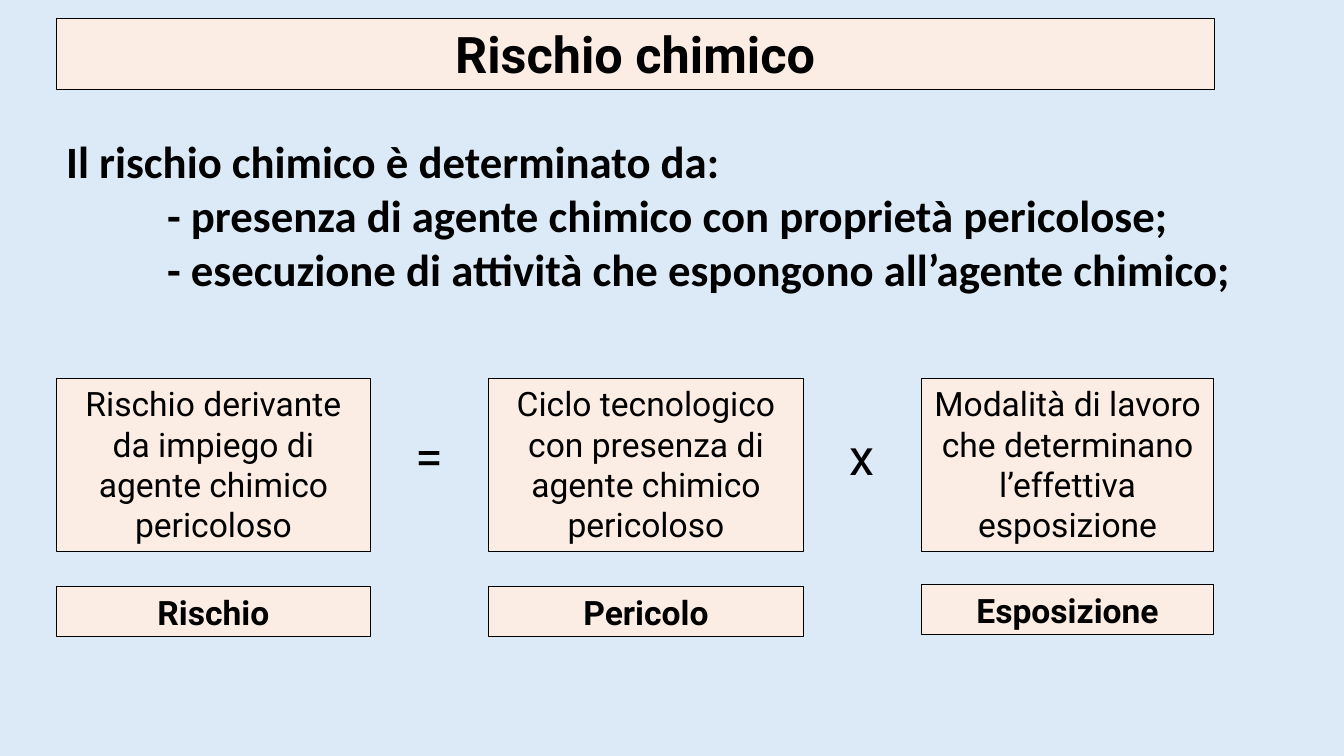
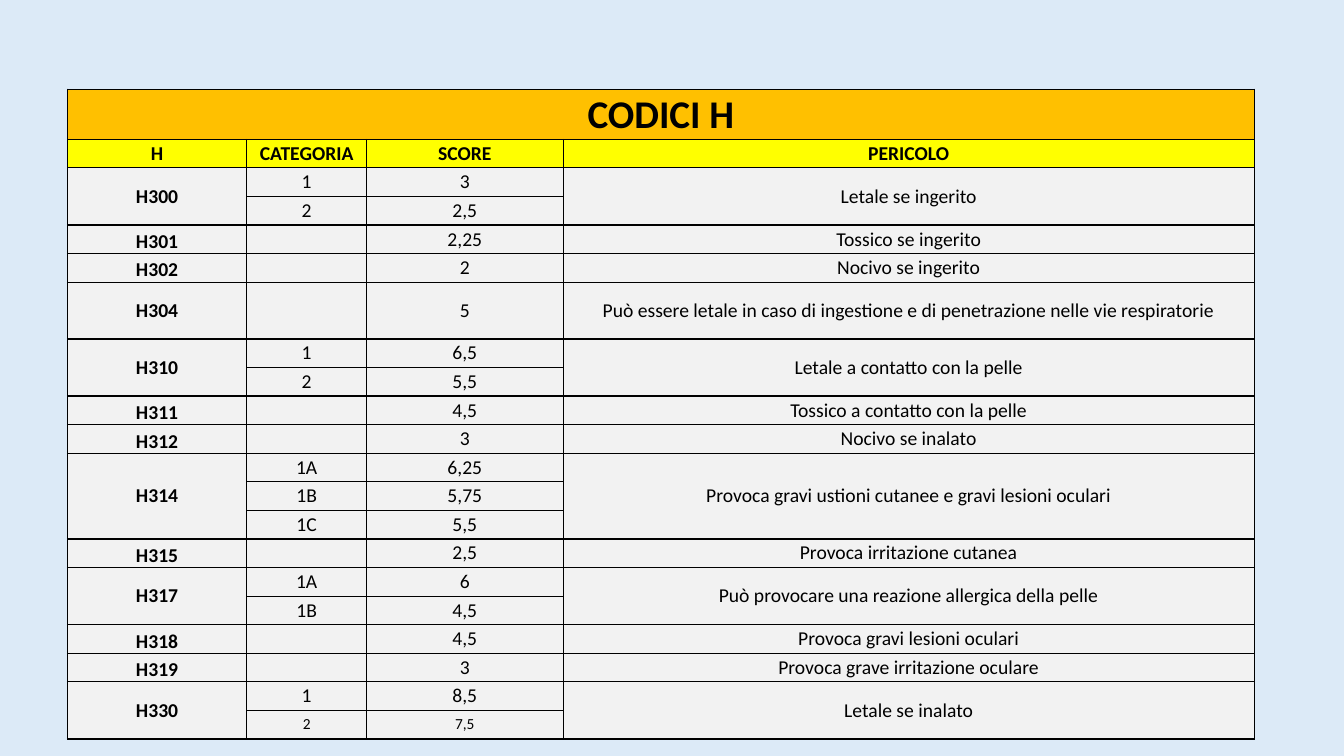
from dataclasses import dataclass
from typing import NamedTuple

from lxml.etree import SubElement
from pptx import Presentation
from pptx.dml.color import RGBColor
from pptx.enum.text import MSO_ANCHOR, MSO_AUTO_SIZE, PP_ALIGN
from pptx.oxml.ns import qn
from pptx.slide import Slide
from pptx.table import _Cell
from pptx.text.text import _Paragraph
from pptx.util import Cm, Pt

BACKGROUND = RGBColor(0xDC, 0xEA, 0xF7)
PEACH = RGBColor(0xFC, 0xED, 0xE4)
BLACK = RGBColor(0x00, 0x00, 0x00)
ORANGE = RGBColor(0xFF, 0xC0, 0x00)
YELLOW = RGBColor(0xFF, 0xFF, 0x00)
GREY = RGBColor(0xF2, 0xF2, 0xF2)
HEADING_FONT = "Roboto"
BODY_FONT = "Calibri"

LEFT = 1.42
FACTOR_PITCH = 10.9
FACTOR_TOP = 9.53
FACTOR_HEIGHT = 4.37
OPERATOR_WIDTH = 2.13
THIN, THICK = 0.5, 1


class Area(NamedTuple):
    """Left, top, width and height in centimetres."""
    left: float
    top: float
    width: float
    height: float


@dataclass
class TextStyle:
    font: str
    size: int
    bold: bool = False
    align: PP_ALIGN = PP_ALIGN.CENTER


@dataclass
class Factor:
    description: str
    label: str
    width: float
    label_top: float
    operator: str = ""


@dataclass
class Hazard:
    code: str
    danger: str
    levels: list[tuple[str, str]]
    row_height: float = 0.72
    follows_pair: bool = False
    anchor: MSO_ANCHOR = MSO_ANCHOR.MIDDLE


TITLE = TextStyle(HEADING_FONT, 36, bold=True)
OPERATOR = TextStyle(HEADING_FONT, 36)
DESCRIPTION = TextStyle(HEADING_FONT, 24)
LABEL = TextStyle(HEADING_FONT, 24, bold=True)
INTRO = TextStyle(BODY_FONT, 32, bold=True, align=PP_ALIGN.JUSTIFY)
TABLE_TITLE = TextStyle(BODY_FONT, 28, bold=True)
TABLE_BOLD = TextStyle(BODY_FONT, 14, bold=True)
TABLE_TEXT = TextStyle(BODY_FONT, 14)
TABLE_SMALL = TextStyle(BODY_FONT, 11)

FACTORS = [
    Factor("Rischio derivante da impiego di agente chimico pericoloso",
           "Rischio", 7.92, 14.78, "="),
    Factor("Ciclo tecnologico con presenza di agente chimico pericoloso",
           "Pericolo", 7.92, 14.78, "x"),
    Factor("Modalità di lavoro che determinano l’effettiva esposizione",
           "Esposizione", 7.37, 14.73),
]

COLUMN_WIDTHS = [4.52, 3.02, 4.95, 17.42]
HEADERS = ["H", "CATEGORIA", "SCORE", "PERICOLO"]
TITLE_HEIGHT = 1.27
HEADER_HEIGHT = 0.72
LOW = MSO_ANCHOR.BOTTOM
HAZARDS = [
    Hazard("H300", "Letale se ingerito", [("1", "3"), ("2", "2,5")]),
    Hazard("H301", "Tossico se ingerito", [("", "2,25")], anchor=LOW),
    Hazard("H302", "Nocivo se ingerito", [("", "2")], follows_pair=True, anchor=LOW),
    Hazard("H304", "Può essere letale in caso di ingestione e di penetrazione "
           "nelle vie respiratorie", [("", "5")], row_height=1.43),
    Hazard("H310", "Letale a contatto con la pelle", [("1", "6,5"), ("2", "5,5")]),
    Hazard("H311", "Tossico a contatto con la pelle", [("", "4,5")], anchor=LOW),
    Hazard("H312", "Nocivo se inalato", [("", "3")], follows_pair=True, anchor=LOW),
    Hazard("H314", "Provoca gravi ustioni cutanee e gravi lesioni oculari",
           [("1A", "6,25"), ("1B", "5,75"), ("1C", "5,5")]),
    Hazard("H315", "Provoca irritazione cutanea", [("", "2,5")], anchor=LOW),
    Hazard("H317", "Può provocare una reazione allergica della pelle",
           [("1A", "6"), ("1B", "4,5")]),
    Hazard("H318", "Provoca gravi lesioni oculari", [("", "4,5")], anchor=LOW),
    Hazard("H319", "Provoca grave irritazione oculare", [("", "3")],
           follows_pair=True, anchor=LOW),
    Hazard("H330", "Letale se inalato", [("1", "8,5"), ("2", "7,5")]),
]


def style_paragraph(para: _Paragraph, style: TextStyle) -> None:
    para.alignment = style.align
    font = para.font
    font.name, font.size, font.bold = style.font, Pt(style.size), style.bold
    font.color.rgb = BLACK


def add_text(page: Slide, area: Area, lines: list[str], style: TextStyle,
             framed: bool = False, indent: float = 0) -> None:
    """Add a text box; indent moves every line after the first."""
    box = page.shapes.add_textbox(*(Cm(length) for length in area))
    if framed:
        box.fill.solid()
        box.fill.fore_color.rgb = PEACH
        box.line.color.rgb = BLACK
        box.line.width = Pt(0.75)
    frame = box.text_frame
    frame.word_wrap = True
    frame.auto_size = MSO_AUTO_SIZE.SHAPE_TO_FIT_TEXT
    frame.text = "\n".join(lines)
    for number, para in enumerate(frame.paragraphs):
        if indent and number:
            properties = para._p.get_or_add_pPr()
            properties.set("marL", str(Cm(indent)))
            properties.set("indent", "0")
        style_paragraph(para, style)


def set_borders(cell: _Cell, left: float, right: float, top: float, bottom: float) -> None:
    properties = cell._tc.get_or_add_tcPr()
    for side, width in zip("LRTB", (left, right, top, bottom)):
        line = SubElement(properties, qn(f"a:ln{side}"), w=str(Pt(width)))
        fill = SubElement(line, qn("a:solidFill"))
        SubElement(fill, qn("a:srgbClr"), val=str(BLACK))


def fill_cell(cell: _Cell, text: str, style: TextStyle, color: RGBColor,
              borders: tuple[float, float, float, float] = (THIN,) * 4,
              anchor: MSO_ANCHOR = MSO_ANCHOR.MIDDLE) -> None:
    """Set a cell; borders run left, right, top, bottom."""
    set_borders(cell, *borders)
    cell.fill.solid()
    cell.fill.fore_color.rgb = color
    cell.margin_left = cell.margin_right = cell.margin_top = cell.margin_bottom = 0
    cell.vertical_anchor = anchor
    cell.text = text
    para = cell.text_frame.paragraphs[0]
    style_paragraph(para, style)
    if not text:
        SubElement(para._p, qn("a:endParaRPr"), sz=str(style.size * 100))


def build_risk_page(page: Slide) -> None:
    add_text(page, Area(LEFT, 0.46, 29.18, 1.8), ["Rischio chimico"], TITLE, framed=True)
    add_text(page, Area(LEFT, 3.25, 32.44, 4.37), [
        "Il rischio chimico è determinato da:",
        "- presenza di agente chimico con proprietà pericolose;",
        "- esecuzione di attività che espongono all’agente chimico;",
    ], INTRO, indent=2.54)
    for number, factor in enumerate(FACTORS):
        left = LEFT + number * FACTOR_PITCH
        add_text(page, Area(left, FACTOR_TOP, factor.width, FACTOR_HEIGHT),
                 [factor.description], DESCRIPTION, framed=True)
        add_text(page, Area(left, factor.label_top, factor.width, 1.27),
                 [factor.label], LABEL, framed=True)
        if factor.operator:
            gap_middle = left + (factor.width + FACTOR_PITCH) / 2
            add_text(page, Area(gap_middle - OPERATOR_WIDTH / 2, 10.59, OPERATOR_WIDTH, 1.8),
                     [factor.operator], OPERATOR)


def build_codes_page(page: Slide) -> None:
    heights = [TITLE_HEIGHT, HEADER_HEIGHT]
    for hazard in HAZARDS:
        heights += [hazard.row_height] * len(hazard.levels)
    frame = page.shapes.add_table(len(heights), len(COLUMN_WIDTHS), Cm(1.7), Cm(2.24),
                                  Cm(sum(COLUMN_WIDTHS)), Cm(sum(heights)))
    table = frame.table
    table.first_row = table.horz_banding = False
    for column, width in zip(table.columns, COLUMN_WIDTHS):
        column.width = Cm(width)
    for row, height in zip(table.rows, heights):
        row.height = Cm(height)

    last = len(HEADERS) - 1
    for column, header in enumerate(HEADERS):
        fill_cell(table.cell(0, column), "" if column else "CODICI H", TABLE_TITLE,
                  ORANGE, anchor=MSO_ANCHOR.BOTTOM)
        fill_cell(table.cell(1, column), header, TABLE_BOLD, YELLOW,
                  (THIN, THIN, THIN, THICK))
    table.cell(0, 0).merge(table.cell(0, last))

    first = 2
    for hazard, following in zip(HAZARDS, HAZARDS[1:] + [None]):
        end = first + len(hazard.levels) - 1
        top = THIN if hazard.follows_pair else THICK
        bottom = THIN if following and following.follows_pair else THICK
        for row, (category, score) in enumerate(hazard.levels, first):
            is_first = row == first
            fill_cell(table.cell(row, 0), hazard.code if is_first else "", TABLE_BOLD,
                      GREY, (THICK, THIN, top, bottom), hazard.anchor)
            fill_cell(table.cell(row, last), hazard.danger if is_first else "", TABLE_TEXT,
                      GREY, (THIN, THICK, top, bottom))
            style = TABLE_SMALL if row == len(heights) - 1 else TABLE_TEXT
            borders = (THIN, THIN, top if is_first else THIN, bottom if row == end else THIN)
            for column, text in ((1, category), (2, score)):
                fill_cell(table.cell(row, column), text, style, GREY, borders)
        if end > first:
            for column in (0, last):
                table.cell(first, column).merge(table.cell(end, column))
        first = end + 1


def main() -> None:
    deck = Presentation()
    deck.slide_width, deck.slide_height = Cm(33.87), Cm(19.05)
    background = deck.slide_master.background.fill
    background.solid()
    background.fore_color.rgb = BACKGROUND
    blank = deck.slide_layouts[6]
    for build_page in (build_risk_page, build_codes_page):
        build_page(deck.slides.add_slide(blank))
    deck.save("out.pptx")


if __name__ == "__main__":
    main()
